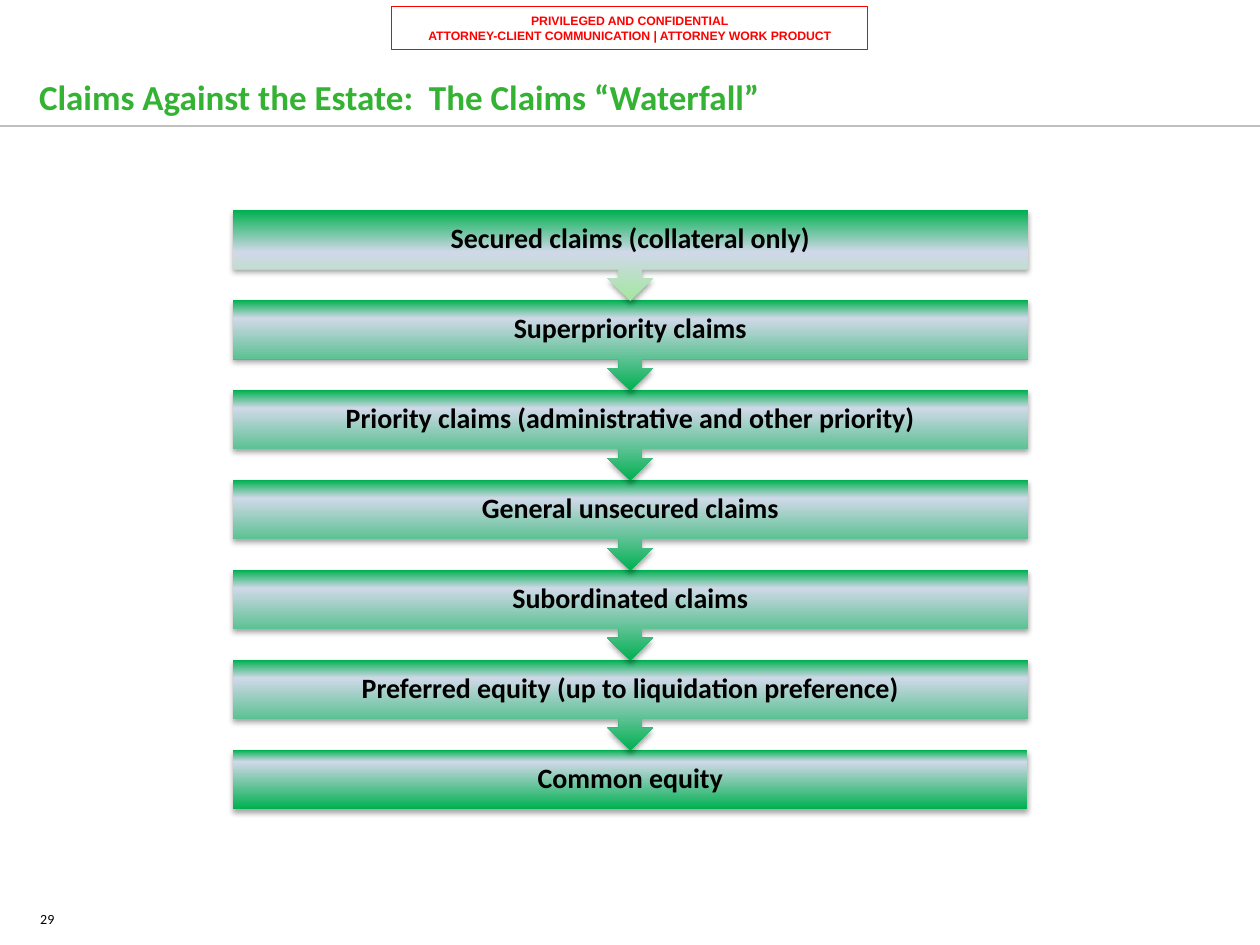
"""Build the claims waterfall slide."""
from copy import deepcopy
from dataclasses import dataclass

from lxml import etree
from pptx import Presentation
from pptx import util as u
from pptx.dml.color import RGBColor
from pptx.enum import shapes, text
from pptx.oxml import ns

BLACK = RGBColor(0x00, 0x00, 0x00)
RED = RGBColor(0xFF, 0x00, 0x00)
GREY = RGBColor(0xBF, 0xBF, 0xBF)
TITLE_GREEN = RGBColor(0x34, 0xB2, 0x33)
GREEN = RGBColor(0x00, 0xB0, 0x50)
PALE_GREEN = RGBColor(0xA8, 0xE6, 0xA8)
PALE_BLUE = RGBColor(0xD0, 0xD8, 0xE8)

GREEN_STOPS = ((0, GREEN), (0.8, PALE_BLUE), (1, GREEN))
PALE_STOPS = ((0.06, PALE_GREEN), (0.54, PALE_BLUE), (1, GREEN))

TIER_LEFT, TIER_WIDTH = 133.2, 454
FIRST_TOP, TIER_STEP = 120.1, 51.4
BAR_HEIGHT, CALLOUT_HEIGHT = 33.7, 51.8


@dataclass(frozen=True)
class Tier:
    label: str
    stops: tuple = GREEN_STOPS
    has_arrow: bool = True


TIERS = [
    Tier("Secured claims (collateral only)", stops=PALE_STOPS),
    Tier("Superpriority claims"),
    Tier("Priority claims (administrative and other priority)"),
    Tier("General unsecured claims"),
    Tier("Subordinated claims"),
    Tier("Preferred equity (up to liquidation preference)"),
    Tier("Common equity", has_arrow=False),
]


def apply_format(target, values: dict) -> None:
    for name, value in values.items():
        setattr(target, name, value)


def place(shape, left: float, top: float, width: float, height: float) -> None:
    apply_format(shape, {"left": u.Pt(left), "top": u.Pt(top),
                         "width": u.Pt(width), "height": u.Pt(height)})


def write_text(shape, lines: list[str], font: dict, frame: dict, paragraph_format: dict) -> None:
    text_frame = shape.text_frame
    apply_format(text_frame, {"word_wrap": True, **frame})
    text_frame.text = "\n".join(lines)
    for paragraph in text_frame.paragraphs:
        apply_format(paragraph, paragraph_format)
        color = font["color"]
        apply_format(paragraph.font, {k: v for k, v in font.items() if k != "color"})
        paragraph.font.color.rgb = color


def add_effects(shape, with_shadow: bool) -> None:
    properties = shape._element.spPr
    effects = etree.SubElement(properties, ns.qn("a:effectLst"))
    if with_shadow:
        shadow = etree.SubElement(effects, ns.qn("a:outerShdw"), blurRad=str(u.Pt(3.1)),
                                  dist=str(u.Pt(1.8)), dir="5400000", rotWithShape="0")
        color = etree.SubElement(shadow, ns.qn("a:srgbClr"), val=str(BLACK))
        etree.SubElement(color, ns.qn("a:alpha"), val="35000")


def fill_gradient(shape, stops: tuple) -> None:
    shape.fill.gradient()
    shape.fill.gradient_angle = 90
    stop_list = shape._element.spPr.find(".//" + ns.qn("a:gsLst"))
    stop_list.append(deepcopy(stop_list[-1]))
    for stop, (position, color) in zip(shape.fill.gradient_stops, stops):
        stop.position = position
        stop.color.rgb = color


def add_title(slide) -> None:
    title = slide.shapes.title
    place(title, 22.3, 15.8, 669, 54.7)
    write_text(title, ["Claims Against the Estate:  The Claims “Waterfall”"],
               {"size": u.Pt(20), "name": "Calibri", "bold": True, "color": TITLE_GREEN},
               {"vertical_anchor": text.MSO_ANCHOR.BOTTOM, "margin_left": 0,
                "auto_size": text.MSO_AUTO_SIZE.NONE},
               {"alignment": text.PP_ALIGN.LEFT})


def add_rule(slide) -> None:
    rule = slide.shapes.add_connector(shapes.MSO_CONNECTOR.STRAIGHT,
                                      u.Pt(0), u.Pt(72), u.Pt(720), u.Pt(72))
    rule.line.color.rgb = GREY
    rule.line.width = u.Pt(0.75)
    add_effects(rule, with_shadow=False)


def add_banner(slide) -> None:
    banner = slide.shapes.add_shape(shapes.MSO_SHAPE.RECTANGLE, 0, 0, 0, 0)
    place(banner, 223.7, 3.7, 272.2, 24.5)
    banner.shadow.inherit = False
    banner.fill.background()
    banner.line.color.rgb = RED
    banner.line.width = u.Pt(0.75)
    write_text(banner, ["PRIVILEGED AND CONFIDENTIAL",
                        "ATTORNEY-CLIENT COMMUNICATION | ATTORNEY WORK PRODUCT"],
               {"size": u.Pt(7), "name": "Arial", "bold": True, "color": RED},
               {"vertical_anchor": text.MSO_ANCHOR.MIDDLE},
               {"alignment": text.PP_ALIGN.CENTER})


def add_page_number(slide) -> None:
    number = slide.shapes.add_textbox(0, 0, 0, 0)
    place(number, 23, 517, 151.2, 17.3)
    write_text(number, ["29"], {"size": u.Pt(8), "name": "Calibri", "color": BLACK},
               {"margin_left": 0, "margin_right": 0}, {"alignment": text.PP_ALIGN.LEFT})


def add_tier(slide, tier: Tier, top: float) -> None:
    kind = shapes.MSO_SHAPE.DOWN_ARROW_CALLOUT if tier.has_arrow else shapes.MSO_SHAPE.RECTANGLE
    shape = slide.shapes.add_shape(kind, 0, 0, 0, 0)
    place(shape, TIER_LEFT, top, TIER_WIDTH, CALLOUT_HEIGHT if tier.has_arrow else BAR_HEIGHT)
    fill_gradient(shape, tier.stops)
    shape.line.fill.background()
    add_effects(shape, with_shadow=True)
    margins = {f"margin_{side}": u.Pt(8.6) for side in ("left", "top", "right", "bottom")}
    write_text(shape, [tier.label],
               {"size": u.Pt(16), "name": "Calibri", "bold": True, "color": BLACK},
               {"vertical_anchor": text.MSO_ANCHOR.MIDDLE, **margins},
               {"alignment": text.PP_ALIGN.CENTER, "line_spacing": 0.9})


def main() -> None:
    presentation = Presentation()
    presentation.slide_width, presentation.slide_height = u.Pt(720), u.Pt(540)
    slide = presentation.slides.add_slide(presentation.slide_layouts[5])
    add_page_number(slide)
    add_rule(slide)
    add_banner(slide)
    add_title(slide)
    for index, tier in reversed(list(enumerate(TIERS))):
        add_tier(slide, tier, FIRST_TOP + index * TIER_STEP)
    presentation.save("out.pptx")


if __name__ == "__main__":
    main()
